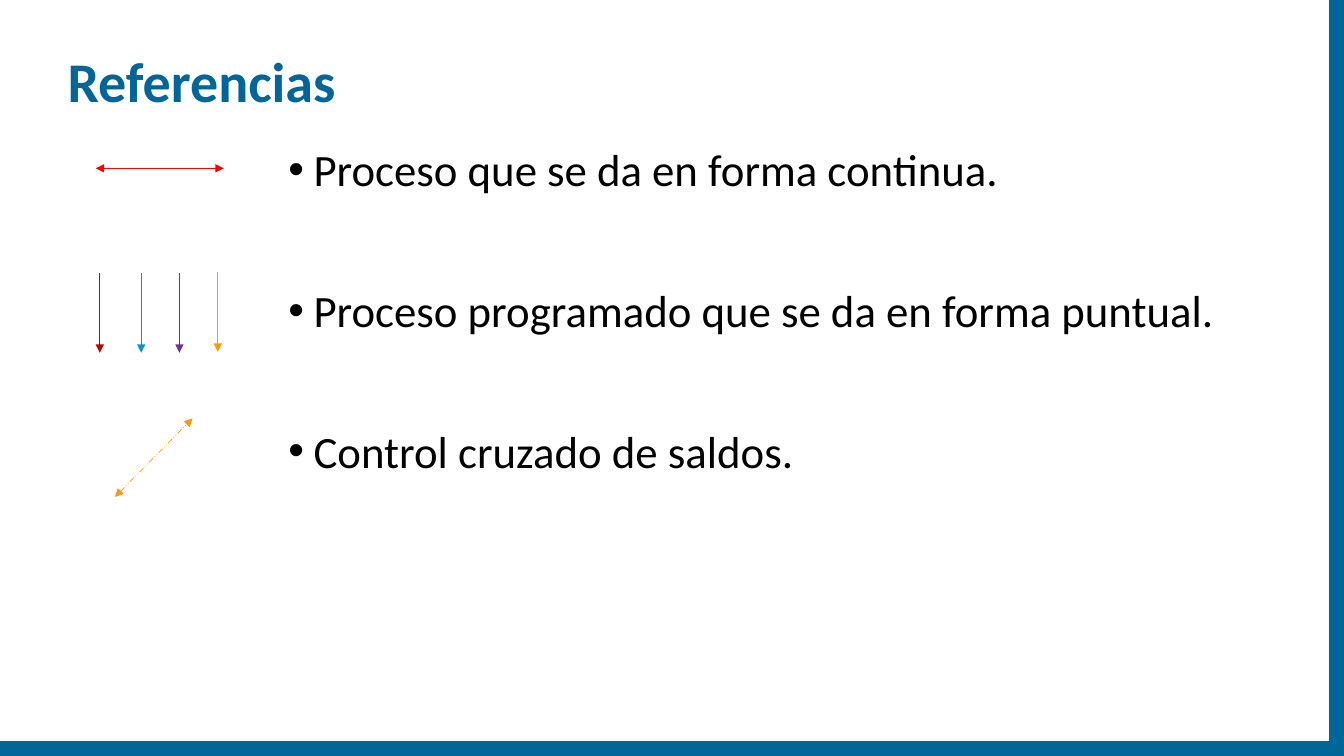
from lxml import etree
from pptx import Presentation
from pptx.dml.color import RGBColor
from pptx.enum.dml import MSO_LINE
from pptx.enum.shapes import MSO_CONNECTOR, MSO_SHAPE
from pptx.enum.text import MSO_ANCHOR, MSO_AUTO_SIZE, PP_ALIGN
from pptx.oxml.ns import qn
from pptx.util import Inches, Pt

STRAIGHT = MSO_CONNECTOR.STRAIGHT
RECTANGLE = MSO_SHAPE.RECTANGLE
DASH_DOT_DOT = MSO_LINE.DASH_DOT_DOT
LEFT = PP_ALIGN.LEFT
TOP, MIDDLE = MSO_ANCHOR.TOP, MSO_ANCHOR.MIDDLE
NO_AUTOFIT = MSO_AUTO_SIZE.NONE

WIDTH, HEIGHT, BAR = 13.33, 7.5, 0.14
BLUE, ORANGE = "006699", "FF9900"
REFERENCES = [
    "Proceso que se da en forma continua.",
    "Proceso programado que se da en forma puntual.",
    "Control cruzado de saldos.",
]
SCHEDULED_ARROWS = [
    (0.99, 2.71, "C00000"),
    (1.4, 2.71, "0099CC"),
    (1.78, 2.71, "7030A0"),
    (2.16, 2.7, ORANGE),
]


def color(value):
    return RGBColor.from_string(value)


def place(shape, left, top, width, height):
    shape.left, shape.top = Inches(left), Inches(top)
    shape.width, shape.height = Inches(width), Inches(height)


def prepare_frame(shape, anchor):
    frame = shape.text_frame
    frame.word_wrap = True
    frame.auto_size = NO_AUTOFIT
    frame.vertical_anchor = anchor
    return frame


def set_font(para, size, value, bold=False):
    font = para.font
    font.name, font.size, font.bold = "Calibri", Pt(size), bold
    font.color.rgb = color(value)


def add_bar(page, left, top, width, height):
    bar = page.shapes.add_shape(
        RECTANGLE, Inches(left), Inches(top), Inches(width), Inches(height)
    )
    bar.shadow.inherit = False
    bar.fill.solid()
    bar.fill.fore_color.rgb = color(BLUE)
    bar.line.color.rgb = color(BLUE)
    bar.line.width = Pt(1)


def add_title(page, text):
    title = page.shapes.title
    place(title, 0.57, 0.4, 11.84, 0.87)
    para = prepare_frame(title, MIDDLE).paragraphs[0]
    para.text = text
    para.alignment = LEFT
    para.line_spacing = 0.9
    set_font(para, 40, BLUE, bold=True)


def add_bullet(para):
    props = para._p.get_or_add_pPr()
    props.set("marL", str(Inches(0.25)))
    props.set("indent", str(Inches(-0.25)))
    etree.SubElement(props, qn("a:buFont")).set("typeface", "Arial")
    etree.SubElement(props, qn("a:buChar")).set("char", "•")


def add_list(page, items):
    body = page.placeholders[1]
    place(body, 2.76, 1.36, 10.43, 5.94)
    frame = prepare_frame(body, TOP)
    for index, text in enumerate(items):
        para = frame.add_paragraph() if index else frame.paragraphs[0]
        para.text = text
        para.space_before = Pt(62 if index else 0)
        para.space_after = Pt(0)
        add_bullet(para)
        set_font(para, 32, "000000")


def add_arrow(page, start, end, value, both_ends=False, dash=None):
    arrow = page.shapes.add_connector(
        STRAIGHT, *(Inches(number) for number in (*start, *end))
    )
    arrow.line.color.rgb = color(value)
    arrow.line.width = Pt(0.5)
    if dash is not None:
        arrow.line.dash_style = dash
    outline = arrow.line._get_or_add_ln()
    for tag in ("a:headEnd", "a:tailEnd") if both_ends else ("a:tailEnd",):
        etree.SubElement(outline, qn(tag)).set("type", "triangle")
    etree.SubElement(arrow._element.spPr, qn("a:effectLst"))


def main():
    deck = Presentation()
    deck.slide_width, deck.slide_height = Inches(WIDTH), Inches(HEIGHT)
    page = deck.slides.add_slide(deck.slide_layouts[1])
    add_bar(page, 0, HEIGHT - BAR, WIDTH, BAR)
    add_bar(page, WIDTH - BAR, 0, BAR, HEIGHT - BAR)
    add_title(page, "Referencias")
    add_list(page, REFERENCES)
    add_arrow(page, (0.95, 1.67), (2.22, 1.67), "FF0000", both_ends=True)
    for left, top, value in SCHEDULED_ARROWS:
        add_arrow(page, (left, top), (left, top + 0.79), value)
    add_arrow(page, (1.14, 4.93), (1.91, 4.15), ORANGE, both_ends=True, dash=DASH_DOT_DOT)
    deck.save("out.pptx")


if __name__ == "__main__":
    main()
